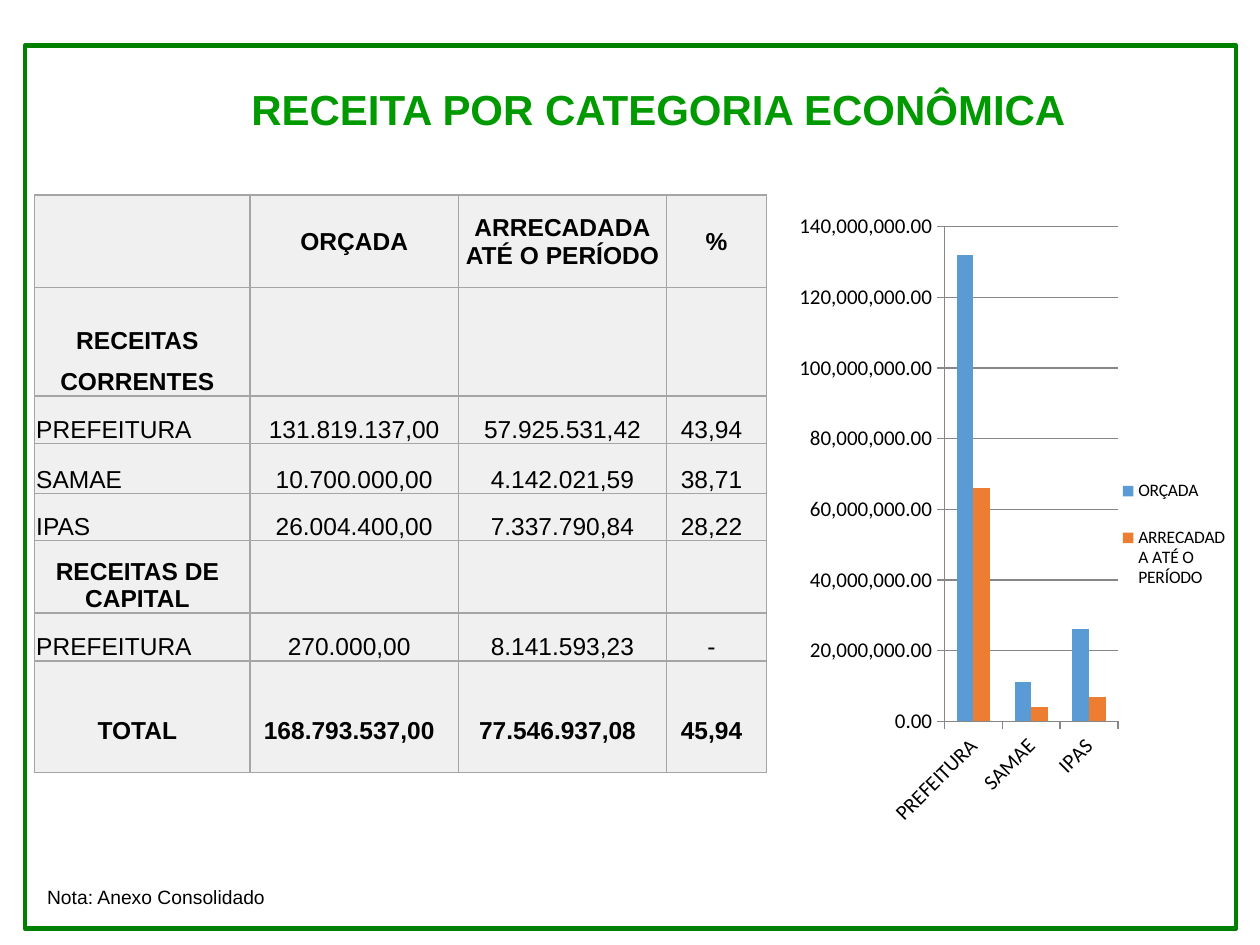
from lxml import etree
from pptx import Presentation
from pptx import util as u
from pptx.chart.data import CategoryChartData
from pptx.dml.color import RGBColor
from pptx.enum import chart as ch, shapes, text
from pptx.oxml.ns import qn

HUES = {"frame": "008000", "title": "009900", "ink": "000000", "cell": "F0F0F0",
        "rule": "A5A5A5", "grid": "878787", "blue": "5B9BD5", "gold": "ED7D31"}
HEADS = ["", "ORÇADA", "ARRECADADA\nATÉ O PERÍODO", "%"]
ROWS = [
    ["RECEITAS CORRENTES", "", "", ""],
    ["PREFEITURA", "131.819.137,00", "57.925.531,42", "43,94"],
    ["SAMAE", "10.700.000,00", "4.142.021,59", "38,71"],
    ["IPAS", "26.004.400,00", "7.337.790,84", "28,22"],
    ["RECEITAS DE CAPITAL", "", "", ""],
    ["PREFEITURA", "270.000,00", "8.141.593,23", "-"],
    ["TOTAL", "168.793.537,00", "77.546.937,08", "45,94"],
]
WIDTHS = [4.34, 4.2, 4.2, 2.01]
HEIGHTS = [1.87, 2.18, 0.96, 1.01, 0.95, 1.46, 0.96, 2.25]
BOLD = {0, 1, 5, 7}
MID, LEFT = text.PP_ALIGN.CENTER, text.PP_ALIGN.LEFT


def hue(name):
    return RGBColor.from_string(HUES[name])


def place(box):
    return [u.Cm(n) for n in box]


def write(par, words, size, tint="ink", bold=False, align=LEFT):
    par.alignment = align
    run = par.add_run()
    run.text = words
    font = run.font
    font.name, font.size, font.bold = "Arial", u.Pt(size), bold
    font.color.rgb = hue(tint)


def frame(slide, box):
    rect = slide.shapes.add_shape(shapes.MSO_SHAPE.RECTANGLE, *place(box))
    rect.shadow.inherit = False
    rect.fill.background()
    rect.line.color.rgb = hue("frame")
    rect.line.width = u.Pt(2.5)


def title(slide, box):
    head = slide.shapes.title
    head.left, head.top, head.width, head.height = place(box)
    body = head.text_frame
    body.word_wrap = True
    body.auto_size = text.MSO_AUTO_SIZE.NONE
    body.vertical_anchor = text.MSO_ANCHOR.TOP
    body.margin_left = u.Cm(1.4)
    par = body.paragraphs[0]
    par.line_spacing = 0.9
    write(par, "RECEITA POR CATEGORIA ECONÔMICA", 24, "title", True, MID)


def edge(cell):
    props = cell._tc.get_or_add_tcPr()
    for side in "LRTB":
        line = etree.SubElement(props, qn("a:ln" + side), w=str(u.Pt(1)))
        fill = etree.SubElement(line, qn("a:solidFill"))
        etree.SubElement(fill, qn("a:srgbClr"), val=HUES["rule"])


def fill_cell(cell, words, row, col):
    edge(cell)
    cell.fill.solid()
    cell.fill.fore_color.rgb = hue("cell")
    last = row == len(ROWS)
    wide = row and (col in (0, 3) or last or (row, col) == (6, 1))
    cell.margin_left = cell.margin_top = u.Cm(0.03)
    cell.margin_right = u.Cm(0.23 if wide else 0.03)
    cell.margin_bottom = u.Cm(0.56 if last else 0)
    cell.vertical_anchor = text.MSO_ANCHOR.BOTTOM if row else text.MSO_ANCHOR.MIDDLE
    if not words:
        cell.text_frame.paragraphs[0].font.size = u.Pt(14)
        return
    bold = row in BOLD
    for i, part in enumerate(words.split("\n")):
        body = cell.text_frame
        par = body.add_paragraph() if i else body.paragraphs[0]
        if row == 1:
            par.line_spacing = 1.5
        write(par, part, 14, bold=bold, align=MID if col or bold else LEFT)


def table(slide, left, top):
    box = (left, top, sum(WIDTHS), sum(HEIGHTS))
    grid = slide.shapes.add_table(len(HEIGHTS), len(WIDTHS), *place(box)).table
    grid.first_row = grid.horz_banding = False
    for col, width in zip(grid.columns, WIDTHS):
        col.width = u.Cm(width)
    for row, height in zip(grid.rows, HEIGHTS):
        row.height = u.Cm(height)
    for r, line in enumerate([HEADS] + ROWS):
        for c, words in enumerate(line):
            fill_cell(grid.cell(r, c), words, r, c)


def layout(node, spot, spare, inner=False):
    for old in node.findall(qn("c:layout")):
        node.remove(old)
    lay = etree.Element(qn("c:layout"))
    man = etree.SubElement(lay, qn("c:manualLayout"))
    if inner:
        etree.SubElement(man, qn("c:layoutTarget"), val="inner")
    for key in ("xMode", "yMode"):
        etree.SubElement(man, qn("c:" + key), val="edge")
    for key, val in zip("xywh", spot):
        etree.SubElement(man, qn("c:" + key), val=str(val))
    node.insert(spare, lay)


def chart(slide, box):
    data = CategoryChartData(number_format="#,##0.00")
    data.categories = ["PREFEITURA", "SAMAE", "IPAS"]
    data.add_series("ORÇADA", [132000000, 11000000, 26000000])
    data.add_series("ARRECADADA ATÉ O PERÍODO", [66000000, 4000000, 7000000])
    bars = slide.shapes.add_chart(
        ch.XL_CHART_TYPE.COLUMN_CLUSTERED, *place(box), data).chart
    bars.has_title = False
    bars.font.name, bars.font.size = "Calibri", u.Pt(12)
    bars.font.color.rgb = hue("ink")
    plot = bars.plots[0]
    plot.gap_width, plot.overlap, plot.vary_by_categories = 150, 0, False
    for ser, tint in zip(plot.series, ("blue", "gold")):
        ser.format.fill.solid()
        ser.format.fill.fore_color.rgb = hue(tint)
    cat, val = bars.category_axis, bars.value_axis
    for axis in (cat, val):
        axis.major_tick_mark = ch.XL_TICK_MARK.OUTSIDE
        axis.format.line.color.rgb = hue("grid")
        axis.tick_labels.font.size = u.Pt(12)
    cat._element.find(qn("c:txPr")).find(qn("a:bodyPr")).set("rot", "-2700000")
    val.minimum_scale, val.maximum_scale, val.major_unit = 0, 140000000, 20000000
    val.has_major_gridlines = True
    val.major_gridlines.format.line.color.rgb = hue("grid")
    val.tick_labels.number_format = "#,##0.00"
    val.tick_labels.number_format_is_linked = False
    bars.has_legend = True
    key = bars.legend
    key.position = ch.XL_LEGEND_POSITION.RIGHT
    key.include_in_layout = False
    key.font.size = u.Pt(10)
    layout(key._element, (0.76, 0.38, 0.23, 0.24), 1)
    area = bars._chartSpace.chart.plotArea
    layout(area, (0.38, 0.04, 0.37, 0.74), 0, True)


def note(slide, box):
    body = slide.shapes.add_textbox(*place(box)).text_frame
    body.word_wrap = True
    write(body.paragraphs[0], "Nota: Anexo Consolidado", 11)


def main():
    deck = Presentation()
    deck.slide_width, deck.slide_height = u.Cm(25.4), u.Cm(19.05)
    slide = deck.slides.add_slide(deck.slide_layouts[5])
    frame(slide, (0.5, 0.92, 24.42, 17.8))
    title(slide, (1.75, 1.68, 21.9, 2.3))
    table(slide, 0.7, 3.93)
    note(slide, (0.7, 17.73, 6.6, 0.73))
    chart(slide, (15.45, 4.03, 9.45, 13.48))
    deck.save("out.pptx")


if __name__ == "__main__":
    main()
